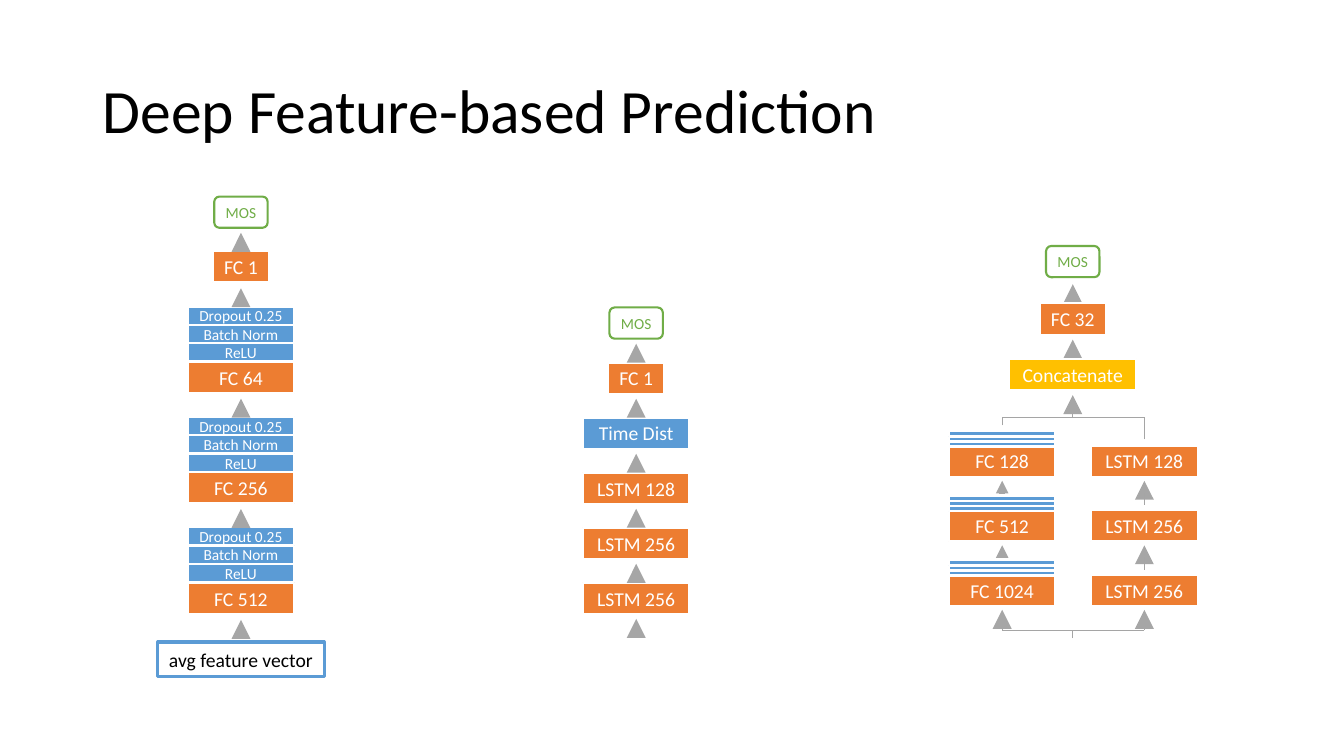
from lxml import etree
from pptx import Presentation
from pptx.dml.color import RGBColor
from pptx.enum.shapes import MSO_CONNECTOR, MSO_SHAPE
from pptx.enum.text import MSO_ANCHOR, PP_ALIGN
from pptx.oxml.ns import qn
from pptx.util import Inches, Pt

RECT, ROUND = MSO_SHAPE.RECTANGLE, MSO_SHAPE.ROUNDED_RECTANGLE
LINE = MSO_CONNECTOR.STRAIGHT
MIDDLE = MSO_ANCHOR.MIDDLE
CENTER, LEFT = PP_ALIGN.CENTER, PP_ALIGN.LEFT

COLORS = {"orange": "ED7D31", "blue": "5B9BD5", "gold": "FFC000", "green": "70AD47",
          "arrow": "A6A6A6", "wire": "A5A5A5", "white": "FFFFFF", "black": "000000"}
HIGH, WIDE = 0.31, 1.06  # layer box


def color(name):
    return RGBColor.from_string(COLORS[name])


class Page:
    """Holds the text style and the current slide."""

    def __init__(self, slide, font):
        self.shapes = slide.shapes
        self.font = font

    def label(self, shape, text, size, ink, align=CENTER, space=1.0, wrap=True, inset=0):
        frame = shape.text_frame
        margin = Inches(inset)
        style = {"word_wrap": wrap, "vertical_anchor": MIDDLE,
                 "margin_left": margin, "margin_right": margin,
                 "margin_top": 0, "margin_bottom": 0}
        for name, value in style.items():
            setattr(frame, name, value)
        line = frame.paragraphs[0]
        line.alignment, line.line_spacing = align, space
        run = line.add_run()
        run.text = text
        for name, value in {"name": self.font, "size": Pt(size)}.items():
            setattr(run.font, name, value)
        run.font.color.rgb = color(ink)

    def title(self, text):
        box = self.shapes.add_textbox(Inches(0.92), Inches(0.4), Inches(11.5), Inches(1.45))
        self.label(box, text, 44, "black", LEFT, 0.9, inset=0.1)

    def box(self, mid, top, text="", fill="orange", width=WIDE, height=HIGH, size=14,
            ink="white", edge="white", weight=1.5, kind=RECT, wrap=True):
        shape = self.shapes.add_shape(kind, Inches(mid - width / 2), Inches(top),
                                      Inches(width), Inches(height))
        shape.shadow.inherit = False
        if fill:
            shape.fill.solid()
            shape.fill.fore_color.rgb = color(fill)
        else:
            shape.fill.background()
        shape.line.color.rgb = color(edge)
        shape.line.width = Pt(weight)
        if text:
            self.label(shape, text, size, ink, wrap=wrap)

    def score(self, mid, top):
        self.box(mid, top, "MOS", None, 0.53, size=11, ink="green", edge="green", kind=ROUND)

    def wire(self, x1, y1, x2, y2, ink="wire", weight=0.5):
        line = self.shapes.add_connector(LINE, Inches(x1), Inches(y1), Inches(x2), Inches(y2))
        line.line.color.rgb = color(ink)
        line.line.width = Pt(weight)
        etree.SubElement(line._element.spPr, qn("a:effectLst"))
        return line

    def arrow(self, mid, start, head="med"):
        line = self.wire(mid, start, mid, start - 0.12, "arrow", 4.5)
        etree.SubElement(line._element.spPr.find(qn("a:ln")), qn("a:tailEnd"),
                         type="triangle", w=head, len=head)


def dense(page, mid):
    """Left network: three dense blocks on the mean feature vector."""
    page.box(mid, 6.37, "avg feature vector", None, 1.65, 0.34, ink="black",
             edge="blue", weight=2.25, wrap=False)
    page.arrow(mid, 6.27)
    for row, units in enumerate((512, 256, 64)):
        top = 5.78 - row * 1.095
        page.box(mid, top, f"FC {units}")
        for step, name in enumerate(("ReLU", "Batch Norm", "Dropout 0.25"), 1):
            page.box(mid, top - step * 0.183, name, "blue", height=0.18, size=11)
        page.arrow(mid, top - 0.61)
    page.box(mid, 2.49, "FC 1", width=0.56)
    page.arrow(mid, 2.43)
    page.score(mid, 1.95)


def series(page, mid):
    """Middle network: layers on a frame sequence."""
    layers = (("LSTM 256", "orange", WIDE), ("LSTM 256", "orange", WIDE),
              ("LSTM 128", "orange", WIDE), ("Time Dist", "blue", WIDE),
              ("FC 1", "orange", 0.56))
    gap = 0.546
    for row, (name, fill, width) in enumerate(layers):
        page.arrow(mid, 6.26 - row * gap)
        page.box(mid, 5.78 - row * gap, name, fill, width)
    page.arrow(mid, 6.26 - len(layers) * gap)
    page.score(mid, 3.05)


def merged(page, left, mid, right):
    """Right network: two branches joined under one head."""
    # Wires below and above the branches
    page.wire(mid, 6.33, mid, 6.25)
    page.wire(left, 6.25, right, 6.25)
    page.wire(left, 4.14, right, 4.14)
    page.wire(mid, 4.14, mid, 4.02)
    page.wire(left, 4.22, left, 4.14)
    page.wire(right, 4.36, right, 4.14)
    for x in (left, right):
        page.wire(x, 6.25, x, 6.13)
        page.arrow(x, 6.17)

    # Branch layers
    pairs = (("FC 1024", "LSTM 256"), ("FC 512", "LSTM 256"), ("FC 128", "LSTM 128"))
    for row, (first, second) in enumerate(pairs):
        top = 5.7 - row * 0.64
        page.box(left, top, first)
        page.box(right, top, second)
        for step in range(1, 4):
            page.box(left, top + 0.01 - step * 0.05, fill="blue", height=0.05)
        if row < len(pairs) - 1:
            page.arrow(left, top - 0.17, "sm")
            page.arrow(right, top - 0.17)
            page.wire(right, top - 0.05, right, top - 0.17)

    # Shared head
    for start in (4.04, 3.49, 2.94):
        page.arrow(mid, start)
    page.box(mid, 3.56, "Concatenate", "gold", 1.26)
    page.box(mid, 3.01, "FC 32", width=0.66)
    page.score(mid, 2.44)


def main():
    deck = Presentation()
    deck.slide_width, deck.slide_height = Inches(13.33), Inches(7.5)
    page = Page(deck.slides.add_slide(deck.slide_layouts[6]), "Calibri")
    page.title("Deep Feature-based Prediction")
    dense(page, 2.39)
    series(page, 6.31)
    merged(page, 9.94, 10.64, 11.35)
    deck.save("out.pptx")


if __name__ == "__main__":
    main()
